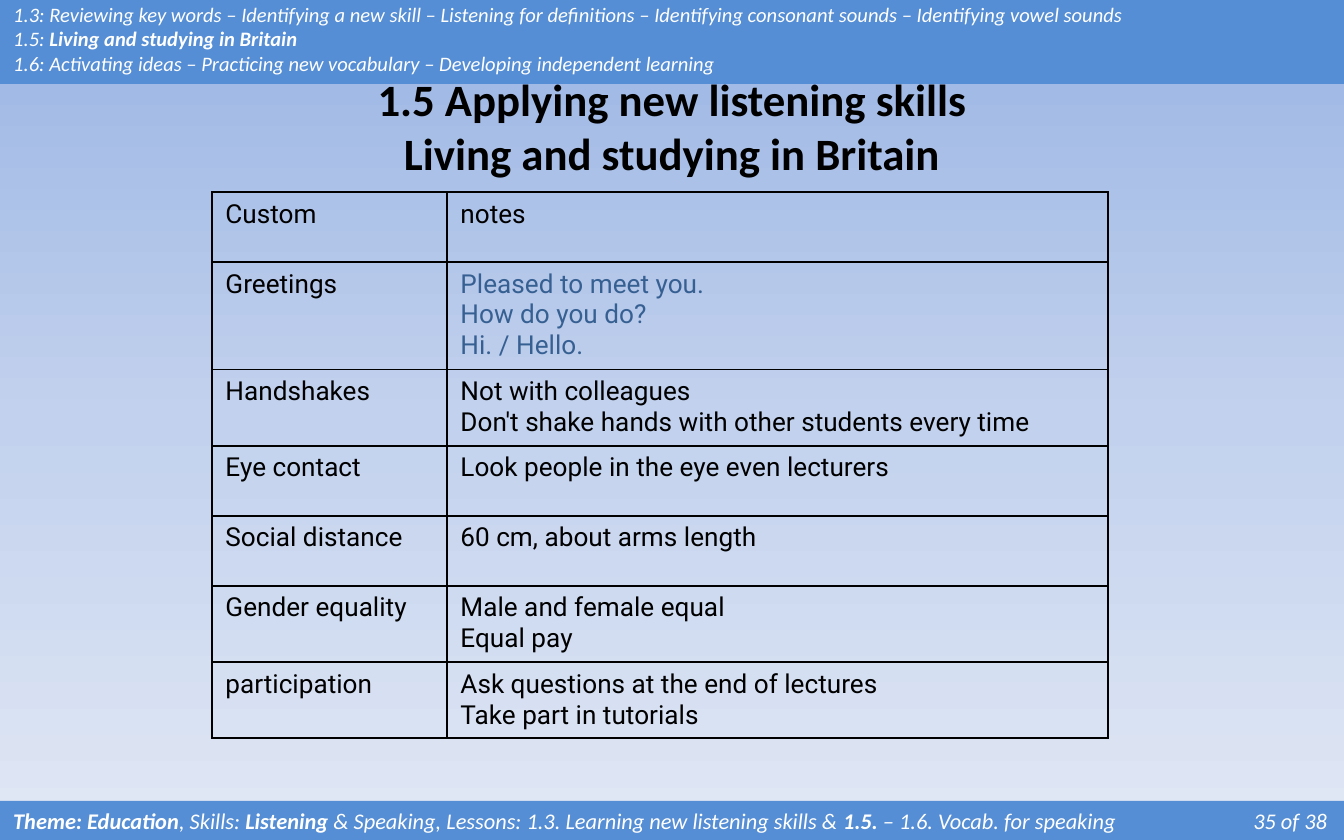
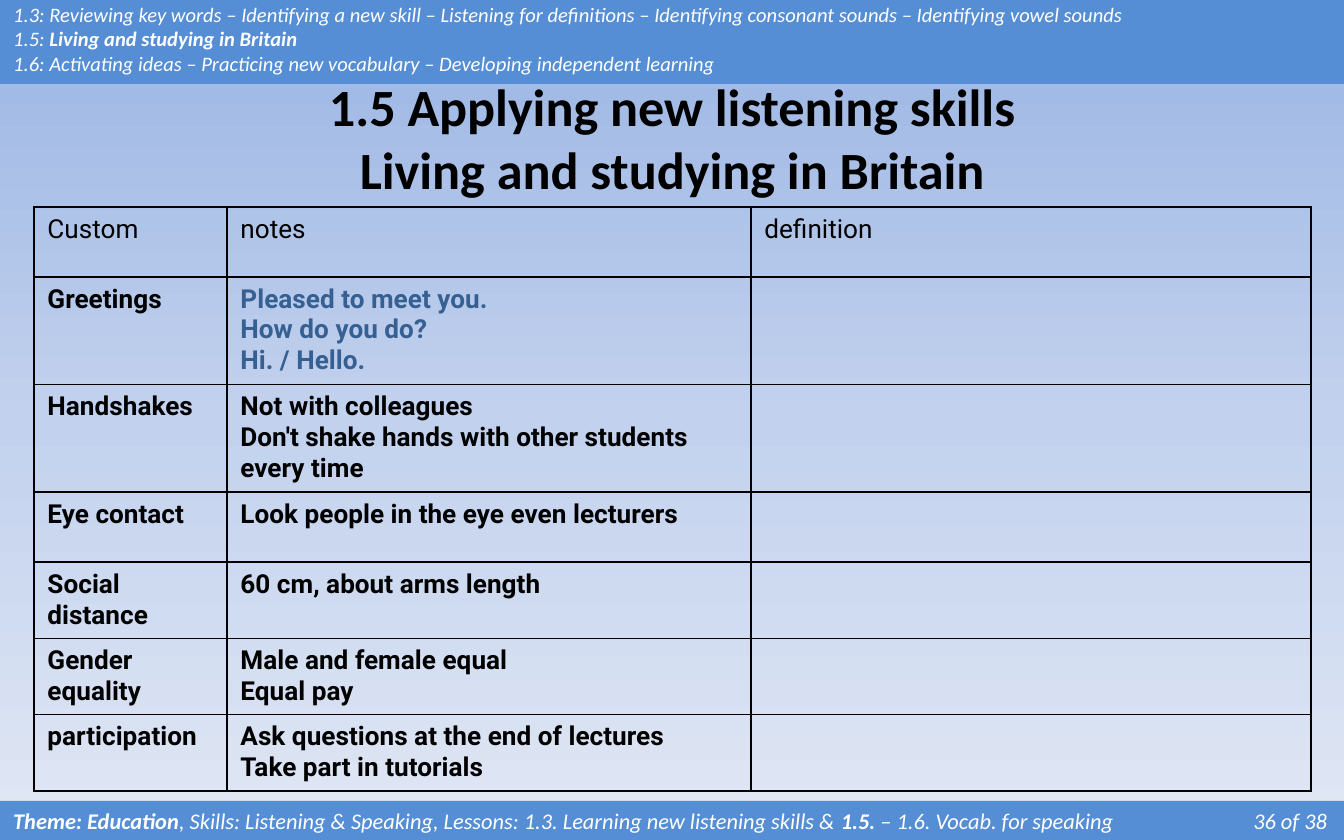
from lxml import etree
from pptx import Presentation
from pptx.dml.color import RGBColor
from pptx.enum.shapes import MSO_SHAPE
from pptx.enum.text import MSO_ANCHOR, MSO_AUTO_SIZE, PP_ALIGN
from pptx.oxml.ns import qn
from pptx.util import Pt
from copy import deepcopy

RECT = MSO_SHAPE.RECTANGLE
TOP, MIDDLE = MSO_ANCHOR.TOP, MSO_ANCHOR.MIDDLE
LEFT, CENTER = PP_ALIGN.LEFT, PP_ALIGN.CENTER
GROW = MSO_AUTO_SIZE.SHAPE_TO_FIT_TEXT

PX = 914400 / 134.4
W, H = 1344, 840
ROW_H = 70
PAGE_TAB = 1314
COLORS = {
    "text": "000000", "answer": "376092", "band": "558ED5", "band_text": "FFFFFF",
    "bg_top": "9AB5E4", "bg_middle": "C2D1ED", "bg_bottom": "E1E8F5",
}
TITLE = ["1.5 Applying new listening skills", "Living and studying in Britain"]
HEADER = [
    [("1.3: Reviewing key words – Identifying a new skill – Listening for definitions – "
      "Identifying consonant sounds – Identifying vowel sounds", False)],
    [("1.5: ", False), ("Living and studying in Britain", True)],
    [("1.6: Activating ideas – Practicing new vocabulary – Developing independent learning", False)],
]
CUSTOMS = [
    ("Greetings", ["Pleased to meet you.", "How do you do?", "Hi. / Hello."]),
    ("Handshakes", ["Not with colleagues", "Don't shake hands with other students every time"]),
    ("Eye contact", ["Look people in the eye even lecturers"]),
    ("Social distance", ["60 cm, about arms length"]),
    ("Gender equality", ["Male and female equal", "Equal pay"]),
    ("participation", ["Ask questions at the end of lectures", "Take part in tutorials"]),
]
SLIDES = [
    {"page": 35, "title_top": 56, "title_size": 24, "table": (212, 192, 547),
     "cols": [235, 661], "heads": ["Custom", "notes"], "bold": False,
     "skills": [(", Skills: ", False), ("Listening", True), (" & Speaking, ", False)]},
    {"page": 36, "title_top": 67, "title_size": 28, "table": (34, 207, 578),
     "cols": [193, 524, 560], "heads": ["Custom", "notes", "definition"], "bold": True,
     "skills": [(", Skills: Listening & Speaking, ", False)]},
]


def px(n):
    return round(n * PX)


def add_run(p, text, size, color, font="Calibri", bold=False, italic=False):
    r = p.add_run()
    r.text = text
    r.font.size, r.font.name = Pt(size), font
    r.font.bold, r.font.italic = bold, italic
    r.font.color.rgb = RGBColor.from_string(COLORS[color])
    return r


# One solid line serves both the cell borders and the outline of the table text
line = etree.Element(qn("a:ln"))
line_fill = etree.SubElement(line, qn("a:solidFill"))
etree.SubElement(line_fill, qn("a:srgbClr")).set("val", COLORS["text"])

prs = Presentation()
prs.slide_width, prs.slide_height = px(W), px(H)

for page in SLIDES:
    s = prs.slides.add_slide(prs.slide_layouts[6])

    # Background
    fill = s.background.fill
    fill.gradient()
    fill.gradient_angle = 270
    stops = s.element.find(".//" + qn("a:gsLst"))
    stops.insert(1, deepcopy(stops[0]))
    for i, name in enumerate(["bg_top", "bg_middle", "bg_bottom"]):
        fill.gradient_stops[i].position = i / 2
        fill.gradient_stops[i].color.rgb = RGBColor.from_string(COLORS[name])

    # Title
    tf = s.shapes.add_textbox(px(67), px(page["title_top"]), px(1210), px(140)).text_frame
    tf.word_wrap = True
    tf.vertical_anchor = MIDDLE
    p = tf.paragraphs[0]
    p.alignment = CENTER
    for i, text in enumerate(TITLE):
        if i:
            p.add_line_break()
        add_run(p, text, page["title_size"], "text", bold=True)

    # Table of customs
    left, top, height = page["table"]
    cols = page["cols"]
    rows = [[[head] for head in page["heads"]]]
    rows += [[[custom], notes, []][:len(cols)] for custom, notes in CUSTOMS]
    gf = s.shapes.add_table(len(rows), len(cols), px(left), px(top), px(sum(cols)), px(height))
    tbl = gf.table
    tbl.first_row = tbl.horz_banding = False
    for col, width in zip(tbl.columns, cols):
        col.width = px(width)
    for i, row in enumerate(rows):
        tbl.rows[i].height = px(ROW_H)
        for j, lines in enumerate(row):
            cell = tbl.cell(i, j)
            tcPr = cell._tc.get_or_add_tcPr()
            for side in ["lnL", "lnR", "lnT", "lnB"]:
                border = etree.SubElement(tcPr, qn("a:" + side), w=str(Pt(1)))
                border.append(deepcopy(line_fill))
            cell.fill.background()
            color = "answer" if (i, j) == (1, 1) else "text"
            for k, text in enumerate(lines):
                p = cell.text_frame.add_paragraph() if k else cell.text_frame.paragraphs[0]
                r = add_run(p, text, 14, color, "Roboto", bold=page["bold"] and i > 0)
                outline = deepcopy(line)
                outline.set("w", str(Pt(0.75)))
                r._r.get_or_add_rPr().insert(0, outline)
    gf.height = px(height)

    # Footer and header bands
    footer = [
        ("Theme: Education", True), *page["skills"],
        ("Lessons: 1.3. Learning new listening skills & ", False), ("1.5.", True),
        (f" – 1.6. Vocab. for speaking\t{page['page']} of 38", False),
    ]
    for y, h, size, paragraphs in [(801, 40, 12, [footer]), (-5, 89, 11, HEADER)]:
        sp = s.shapes.add_shape(RECT, 0, px(y), px(W), px(h))
        sp.shadow.inherit = False
        sp.fill.solid()
        sp.fill.fore_color.rgb = RGBColor.from_string(COLORS["band"])
        sp.line.fill.background()
        tf = sp.text_frame
        tf.word_wrap = True
        tf.auto_size = GROW
        tf.vertical_anchor = TOP
        for i, runs in enumerate(paragraphs):
            p = tf.add_paragraph() if i else tf.paragraphs[0]
            p.alignment = LEFT
            if paragraphs[0] is footer:
                tabs = etree.SubElement(p._p.get_or_add_pPr(), qn("a:tabLst"))
                etree.SubElement(tabs, qn("a:tab"), pos=str(px(PAGE_TAB)), algn="r")
            for text, bold in runs:
                add_run(p, text, size, "band_text", bold=bold, italic=True)

prs.save("out.pptx")
